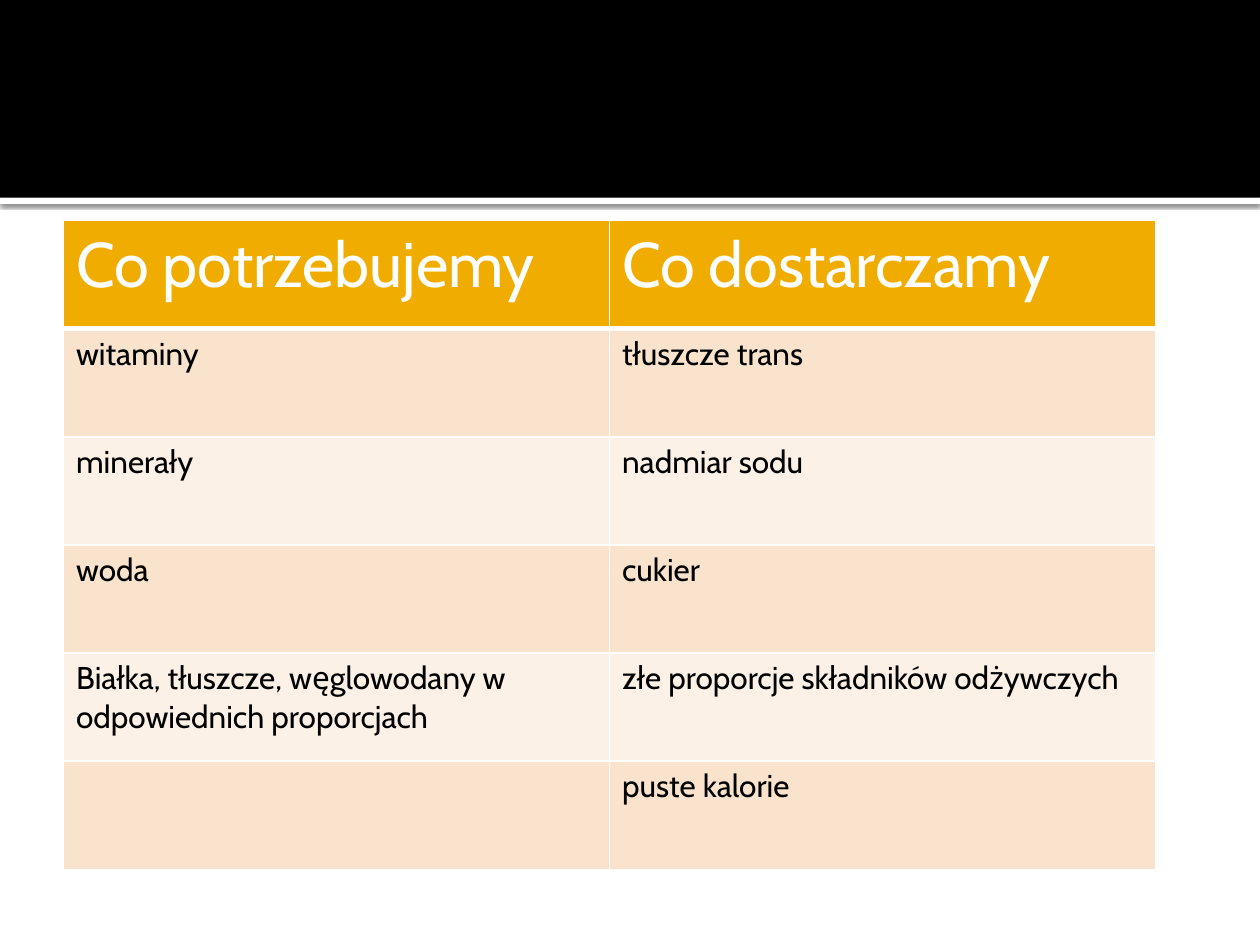
from dataclasses import dataclass
from lxml import etree
from pptx import Presentation
from pptx.dml.color import RGBColor
from pptx.enum import shapes
from pptx.oxml import ns
from pptx.util import Pt


@dataclass(frozen=True)
class Theme:
    font: str = "Cabin"
    white: str = "FFFFFF"
    black: str = "000000"
    gold: str = "F0AD00"
    bands: tuple = ("F9E3CC", "FCF1E7")
    head: int = 36
    body: int = 18


THEME = Theme()
ROWS = [
    ("Co potrzebujemy", "Co dostarczamy"),
    ("witaminy", "tłuszcze trans"),
    ("minerały", "nadmiar sodu"),
    ("woda", "cukier"),
    ("Białka, tłuszcze, węglowodany w odpowiednich proporcjach",
     "złe proporcje składników odżywczych"),
    ("", "puste kalorie"),
]


def node(parent, tag, **attrs):
    """Add a DrawingML child element."""
    return etree.SubElement(parent, ns.qn("a:" + tag),
                            {key: str(val) for key, val in attrs.items()})


def write(frame, text, size, color):
    para = frame.paragraphs[0]
    para.font.size = Pt(size)
    if text:
        run = para.add_run()
        run.text = text
        run.font.name = THEME.font
        run.font.size = Pt(size)
        run.font.bold = False
        run.font.color.rgb = RGBColor.from_string(color)


def bar(slide, left, top, width, height, color):
    shape = slide.shapes.add_shape(shapes.MSO_SHAPE.RECTANGLE, Pt(left), Pt(top),
                                   Pt(width), Pt(height))
    shape.shadow.inherit = False
    shape.fill.solid()
    shape.fill.fore_color.rgb = RGBColor.from_string(color)
    shape.line.fill.background()
    return shape


def shade(shape, blur, dist, alpha):
    """Cast a soft black shadow straight down."""
    effects = shape._element.spPr.find(ns.qn("a:effectLst"))
    outer = node(effects, "outerShdw", blurRad=Pt(blur), dist=Pt(dist),
                 dir=90 * 60000, algn="tl", rotWithShape=0)
    color = node(outer, "srgbClr", val=THEME.black)
    node(color, "alpha", val=alpha * 1000)


def banner(slide, left, top, width, height, strip):
    """Black band with a shadowed white strip along its foot."""
    foot = bar(slide, left, top + height, width, strip, THEME.white)
    shade(foot, 2.5, 0.8, 60)
    bar(slide, left, top, width, height, THEME.black)


def edge(cell, base):
    """Draw white cell borders; base is the width of the bottom one."""
    props = cell._tc.get_or_add_tcPr()
    for side, width in (("L", 1), ("R", 1), ("T", 1), ("B", base)):
        line = node(props, "ln" + side, w=Pt(width))
        node(node(line, "solidFill"), "srgbClr", val=THEME.white)


def grid(slide, left, top, width, height):
    table = slide.shapes.add_table(len(ROWS), len(ROWS[0]), Pt(left), Pt(top),
                                   Pt(width), Pt(height)).table
    for col in table.columns:
        col.width = Pt(width / len(ROWS[0]))
    for i, texts in enumerate(ROWS):
        table.rows[i].height = Pt(height / len(ROWS))
        if i == 0:
            fill, color, size, base = THEME.gold, THEME.white, THEME.head, 3
        else:
            fill, color, size, base = THEME.bands[(i - 1) % 2], THEME.black, THEME.body, 1
        for j, words in enumerate(texts):
            cell = table.cell(i, j)
            edge(cell, base)
            cell.fill.solid()
            cell.fill.fore_color.rgb = RGBColor.from_string(fill)
            write(cell.text_frame, words, size, color)


def main():
    deck = Presentation()
    deck.slide_width, deck.slide_height = Pt(720), Pt(540)
    slide = deck.slides.add_slide(deck.slide_layouts[6])
    banner(slide, 0, 0, 720, 113, 3.6)
    grid(slide, 36.3, 126, 624, 370.8)
    deck.save("out.pptx")


if __name__ == "__main__":
    main()
